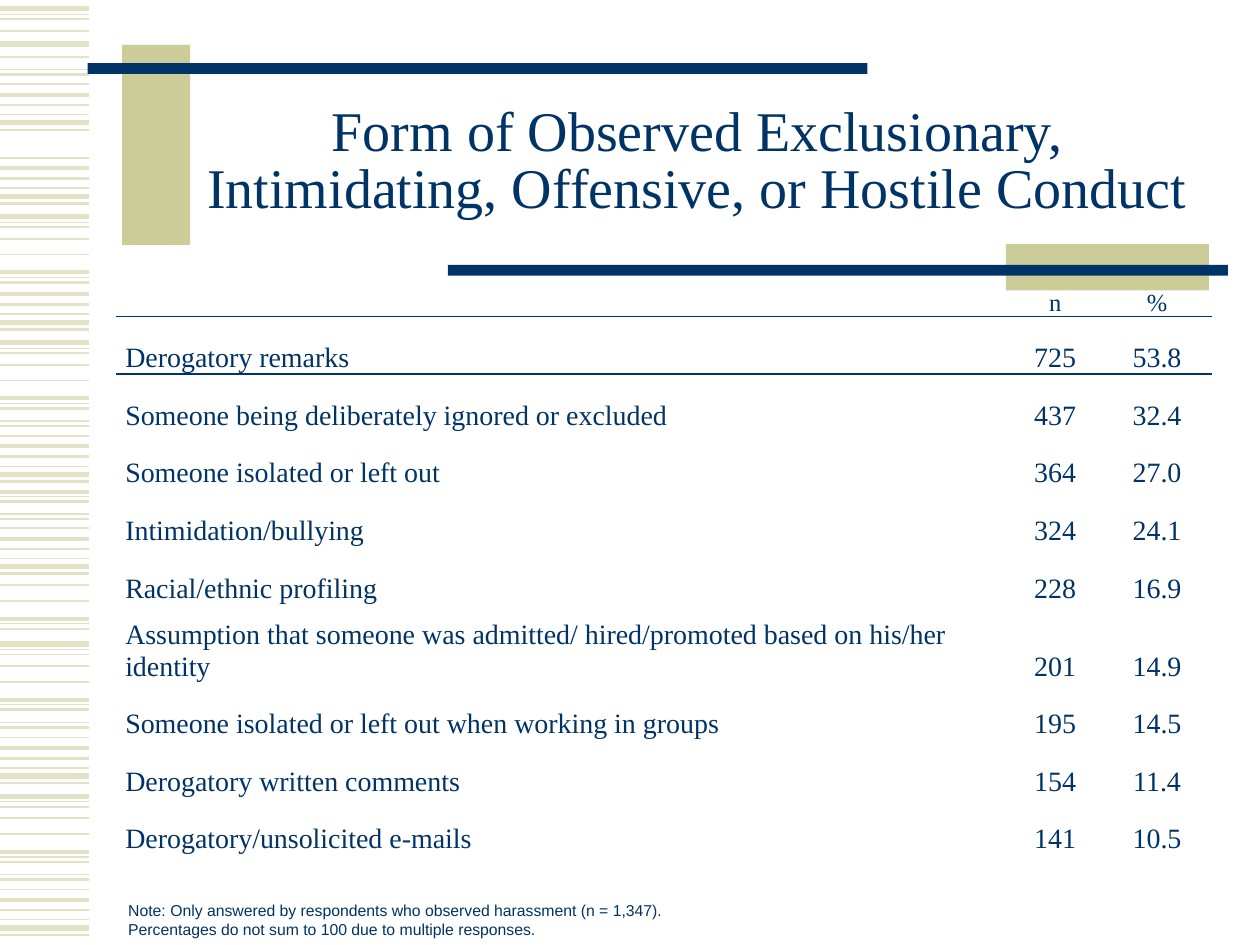
import pptx
import pptx.util
import pptx.dml.color
import pptx.enum.shapes
import pptx.enum.text
import pptx.oxml.ns
import lxml.etree

Pt = pptx.util.Pt
ALIGN = pptx.enum.text.PP_ALIGN
MID = pptx.enum.text.MSO_ANCHOR.MIDDLE
LOW = pptx.enum.text.MSO_ANCHOR.BOTTOM
qn = pptx.oxml.ns.qn

# Content
TITLE = "Form of Observed Exclusionary, Intimidating, Offensive, or Hostile Conduct"
ROWS = [
    ("", "n", "%"),
    ("Derogatory remarks", "725", "53.8"),
    ("Someone being deliberately ignored or excluded", "437", "32.4"),
    ("Someone isolated or left out", "364", "27.0"),
    ("Intimidation/bullying", "324", "24.1"),
    ("Racial/ethnic profiling", "228", "16.9"),
    ("Assumption that someone was admitted/ hired/promoted based on his/her identity",
     "201", "14.9"),
    ("Someone isolated or left out when working in groups", "195", "14.5"),
    ("Derogatory written comments", "154", "11.4"),
    ("Derogatory/unsolicited e-mails", "141", "10.5"),
]
NOTE = [
    "Note: Only answered by respondents who observed harassment (n = 1,347).",
    "Percentages do not sum to 100 due to multiple responses.",
]
COLORS = {"navy": "003366", "khaki": "CCCC99", "stripe": "E3E2C7"}
SERIF, SANS = "Times New Roman", "Arial"

# Two stripe motifs as (offset, weight), and where they start: (top, first, end)
RISE = [(0, 1), (6, 2.25), (11.8, 1.5), (17.3, 0.75), (22, 3), (26, 1.5)]
FALL = [(0, 3), (3.2, 0.75), (6, 1), (12.6, 1), (21.7, 1), (31.8, 2.25),
        (34.7, 0.75), (37.6, 1.5), (44.7, 0.75), (47.6, 1.5)]
BANDS = [
    (RISE, [(48.2, 0, 6), (90.2, 0, 6), (162.2, 1, 6), (249.1, 0, 6),
            (301.9, 0, 6), (421.5, 0, 6), (508.3, 0, 6)]),
    (FALL, [(5, 0, 4), (25.2, 0, 1), (-5, 7, 10), (123.8, 0, 8), (195.8, 0, 10),
            (249.1, 5, 10), (321.8, 3, 8), (368, 0, 10), (455, 0, 10)]),
]
BARS = [
    ("khaki", 69.8, 25.7, 38.9, 114.2),
    ("navy", 50, 36, 445.7, 6.2),
    ("khaki", 574.8, 139.5, 116, 26.5),
    ("navy", 256, 151.3, 445.7, 6.2),
]


def color(name):
    return pptx.dml.color.RGBColor.from_string(COLORS[name])


def style(para, size, face, align=ALIGN.LEFT):
    para.alignment = align
    for run in para.runs:
        run.font.size = Pt(size)
        run.font.name = face
        run.font.color.rgb = color("navy")


def stripe(shapes, y, weight):
    line = shapes.add_connector(
        pptx.enum.shapes.MSO_CONNECTOR.STRAIGHT, 0, Pt(y), Pt(51), Pt(y))
    line.line.color.rgb = color("stripe")
    line.line.width = Pt(weight)
    lxml.etree.SubElement(line._element.spPr, qn("a:effectLst"))


def rule(cell):
    """Draw a 1 pt bottom border; it must precede the cell's fill."""
    edge = lxml.etree.Element(qn("a:lnB"), w=str(Pt(1)))
    fill = lxml.etree.SubElement(edge, qn("a:solidFill"))
    lxml.etree.SubElement(fill, qn("a:srgbClr"), val=COLORS["navy"])
    cell._tc.get_or_add_tcPr().insert(0, edge)


def add_grid(shapes):
    heights = [31] + [32.9] * 5 + [44.6] + [32.9] * 3
    widths = [509.8, 54, 62.4]
    frame = shapes.add_table(len(ROWS), 3, Pt(66.2), Pt(149.8),
                             Pt(sum(widths)), Pt(sum(heights)))
    table = frame.table
    table.first_row = table.horz_banding = False
    # Plain style without grid lines
    table._tbl.tblPr.find(qn("a:tableStyleId")).text = (
        "{2D5ABB26-0587-4C30-8999-92F81FD0307C}")
    for col, width in zip(table.columns, widths):
        col.width = Pt(width)
    for i, (row, height) in enumerate(zip(ROWS, heights)):
        table.rows[i].height = Pt(height)
        for j, text in enumerate(row):
            cell = table.cell(i, j)
            cell.text_frame.text = text
            cell.vertical_anchor = LOW
            cell.margin_left = cell.margin_right = Pt(5.4)
            cell.margin_top = cell.margin_bottom = 0
            cell.fill.background()
            para = cell.text_frame.paragraphs[0]
            style(para, 16 if i else 14, SERIF, ALIGN.CENTER if j else ALIGN.LEFT)
            if i:
                para.space_before = Pt(9)
            if i < 2:
                rule(cell)


def main():
    deck = pptx.Presentation()
    deck.slide_width, deck.slide_height = Pt(720), Pt(540)
    slide = deck.slides.add_slide(deck.slide_layouts[5])
    shapes = slide.shapes
    title = shapes.title

    # Striped left margin
    for motif, starts in BANDS:
        for top, first, end in starts:
            for off, weight in motif[first:end]:
                stripe(shapes, top + off, weight)

    # Khaki blocks and navy bars
    for name, *box in BARS:
        bar = shapes.add_shape(pptx.enum.shapes.MSO_SHAPE.RECTANGLE, *map(Pt, box))
        bar.fill.solid()
        bar.fill.fore_color.rgb = color(name)
        bar.line.fill.background()
        bar.shadow.inherit = False

    # Title, kept in front of the bars
    shapes._spTree.append(title._element)
    title.left, title.top, title.width, title.height = map(Pt, (108, 48.2, 581, 90))
    title.text_frame.text = TITLE
    title.text_frame.vertical_anchor = MID
    title.text_frame.auto_size = pptx.enum.text.MSO_AUTO_SIZE.NONE
    head = title.text_frame.paragraphs[0]
    head.line_spacing = 0.85
    style(head, 32, SERIF, ALIGN.CENTER)

    add_grid(shapes)

    # Footnote
    note = shapes.add_textbox(Pt(66.2), Pt(511.2), Pt(653.8), Pt(28.8)).text_frame
    note.word_wrap = True
    note.vertical_anchor = MID
    note.text = "\n".join(NOTE)
    for para in note.paragraphs:
        style(para, 9, SANS)

    deck.save("out.pptx")


if __name__ == "__main__":
    main()
